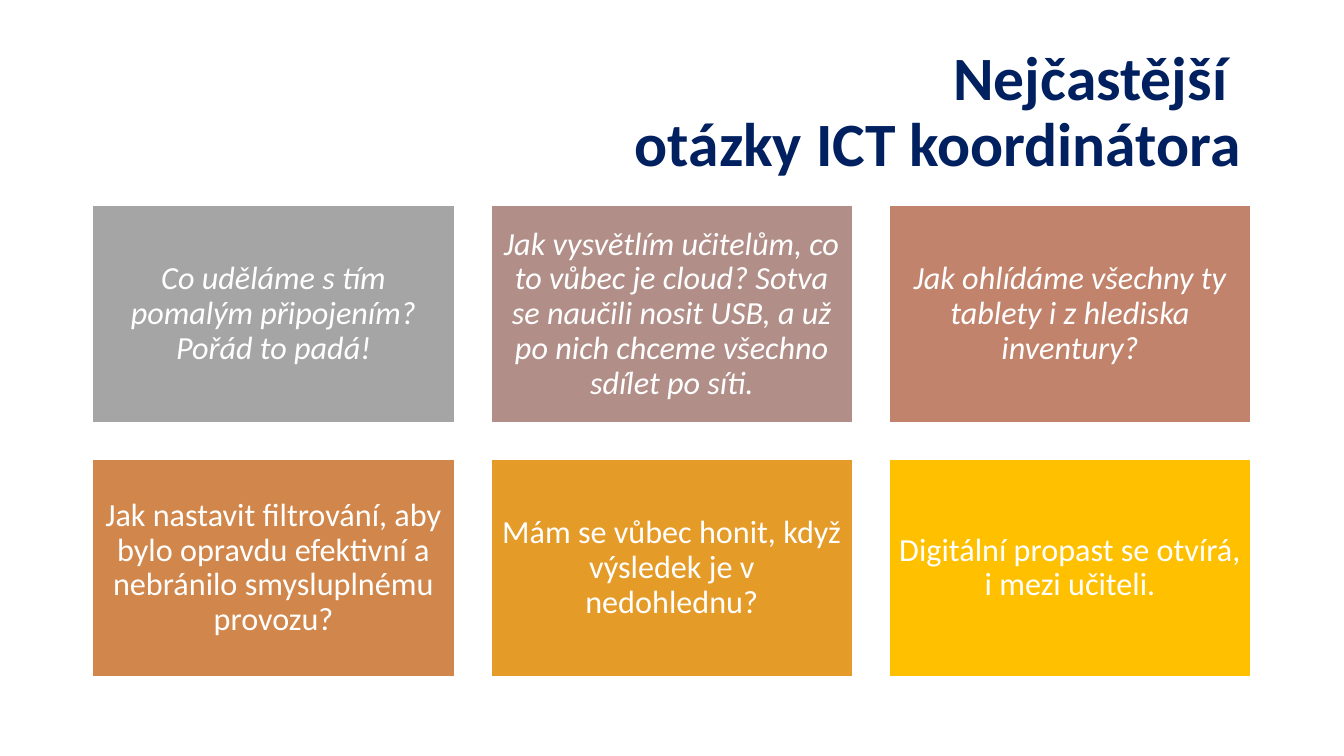
from pptx import Presentation
from pptx import util as u
from pptx.dml.color import RGBColor
from pptx.enum import shapes, text

FONT = "Calibri"
WHITE, NAVY = "FFFFFF", "002060"
LEFT, TOP = 66.2, 146.9
CARD_W, CARD_H, GAP = 258.5, 155.2, 26
COLUMNS = 3

# Question, card colour, italic
QUESTIONS = [
    ("Co uděláme s tím pomalým připojením? Pořád to padá!", "A5A5A5", True),
    ("Jak vysvětlím učitelům, co to vůbec je cloud? Sotva se naučili nosit USB, "
     "a už po nich chceme všechno sdílet po síti.", "B18F88", True),
    ("Jak ohlídáme všechny ty tablety i z hlediska inventury?", "C1836B", True),
    ("Jak nastavit filtrování, aby bylo opravdu efektivní a nebránilo "
     "smysluplnému provozu?", "D1874B", False),
    ("Mám se vůbec honit, když výsledek je v nedohlednu?", "E59B27", False),
    ("Digitální propast se otvírá, i mezi učiteli.", "FFC000", False),
]


def rgb(value):
    return RGBColor.from_string(value)


def write(tf, words, size, color, align, bold=False, italic=False):
    tf.word_wrap = True
    tf.vertical_anchor = text.MSO_ANCHOR.MIDDLE
    tf.text = words
    p = tf.paragraphs[0]
    p.alignment = align
    p.line_spacing = 0.9
    for r in p.runs:
        r.font.name = FONT
        r.font.size = u.Pt(size)
        r.font.bold = bold
        r.font.italic = italic
        r.font.color.rgb = rgb(color)


def add_title(s, words):
    sp = s.shapes.add_textbox(u.Pt(66), u.Pt(28.8), u.Pt(828), u.Pt(104.4))
    write(sp.text_frame, words, 44, NAVY, text.PP_ALIGN.RIGHT, bold=True)


def add_card(s, x, y, words, fill, italic):
    sp = s.shapes.add_shape(shapes.MSO_SHAPE.RECTANGLE,
                            u.Pt(x), u.Pt(y), u.Pt(CARD_W), u.Pt(CARD_H))
    sp.shadow.inherit = False
    sp.fill.solid()
    sp.fill.fore_color.rgb = rgb(fill)
    sp.line.color.rgb = rgb(WHITE)
    sp.line.width = u.Pt(1)
    tf = sp.text_frame
    tf.margin_left = tf.margin_right = tf.margin_top = tf.margin_bottom = u.Pt(6.9)
    write(tf, words, 23, WHITE, text.PP_ALIGN.CENTER, italic=italic)


def main():
    prs = Presentation()
    prs.slide_width, prs.slide_height = u.Pt(960), u.Pt(540)
    s = prs.slides.add_slide(prs.slide_layouts[6])

    # Heading on two lines
    add_title(s, "Nejčastější \votázky ICT koordinátora")

    # Grid of question cards
    for i, (words, fill, italic) in enumerate(QUESTIONS):
        row, col = divmod(i, COLUMNS)
        add_card(s, LEFT + col * (CARD_W + GAP), TOP + row * (CARD_H + GAP),
                 words, fill, italic)

    prs.save("out.pptx")


if __name__ == "__main__":
    main()
